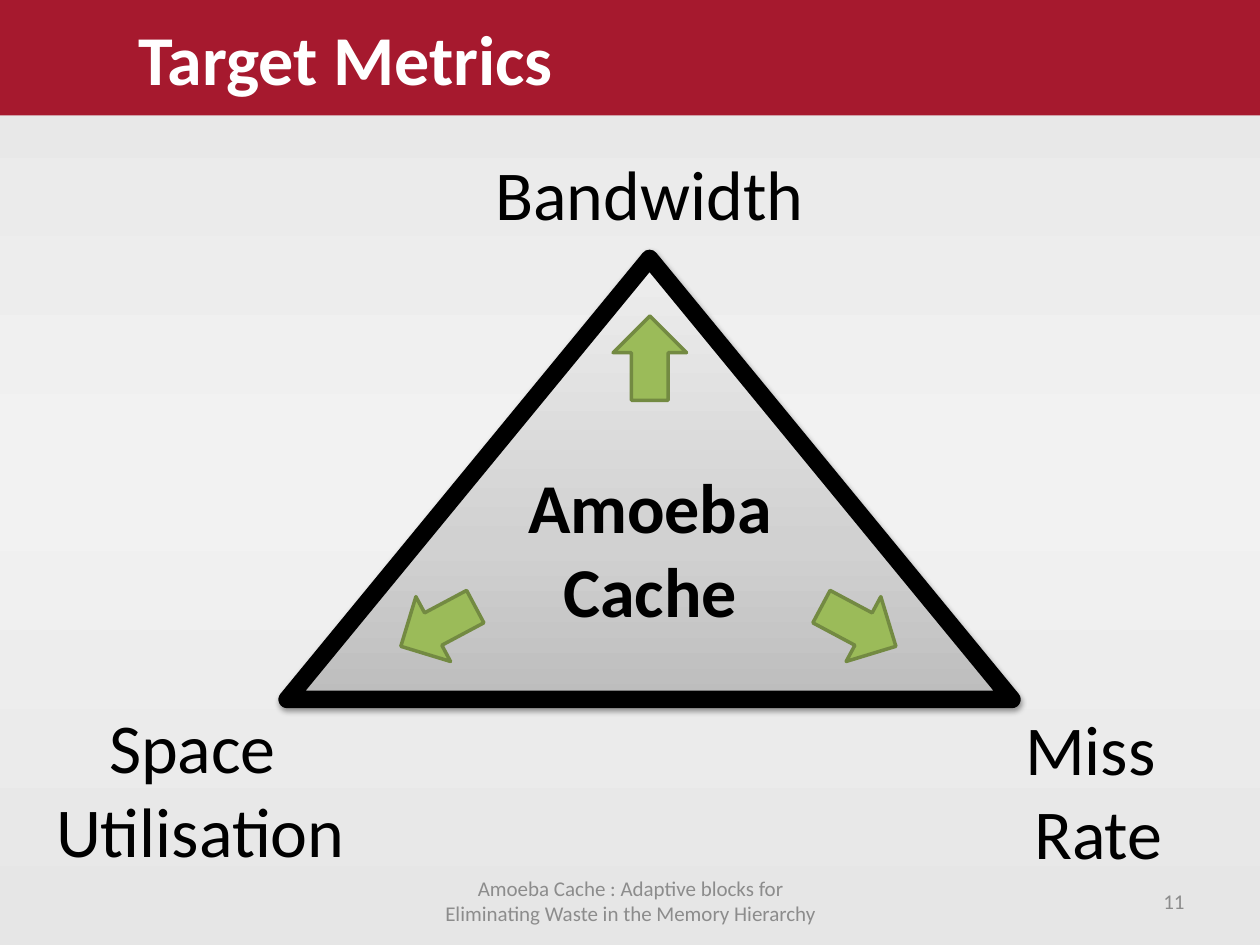
from lxml.etree import SubElement
from pptx import Presentation
from pptx.dml.color import RGBColor
from pptx.enum.shapes import MSO_SHAPE
from pptx.enum.text import MSO_ANCHOR, PP_ALIGN
from pptx.oxml.ns import qn
from pptx.util import Cm, Pt

BLACK = RGBColor(0x00, 0x00, 0x00)
WHITE = RGBColor(0xFF, 0xFF, 0xFF)
GREY = RGBColor(0x8C, 0x8C, 0x8C)
CRIMSON = RGBColor(0xA6, 0x19, 0x2E)
GREEN = RGBColor(0x9B, 0xBB, 0x59)
DARK_GREEN = RGBColor(0x73, 0x8A, 0x42)
EDGE_GREY = RGBColor(0xE6, 0xE6, 0xE6)
MIDDLE_GREY = RGBColor(0xF2, 0xF2, 0xF2)
TRIANGLE_DARK = RGBColor(0xBD, 0xBD, 0xBD)
TRIANGLE_MIDDLE = RGBColor(0xD1, 0xD1, 0xD1)
TRIANGLE_LIGHT = RGBColor(0xEE, 0xEE, 0xEE)


def fill_gradient(fill, element, stops, angle):
    fill.gradient()
    fill.gradient_angle = angle
    stop_list = next(element.iter(qn("a:gsLst")))
    for stop in list(stop_list):
        stop_list.remove(stop)
    for percent, color in stops:
        stop = SubElement(stop_list, qn("a:gs"), pos=str(percent * 1000))
        SubElement(stop, qn("a:srgbClr"), val=str(color))


def add_outline(shape, color, width):
    shape.line.color.rgb = color
    shape.line.width = Pt(width)
    SubElement(shape.line._get_or_add_ln(), qn("a:round"))


def add_soft_shadow(shape):
    effects = shape._element.spPr.find(qn("a:effectLst"))
    shadow = SubElement(effects, qn("a:outerShdw"), blurRad=str(Pt(3.1)),
                        dist=str(Pt(1.6)), dir="5400000", rotWithShape="0")
    color = SubElement(shadow, qn("a:srgbClr"), val=str(BLACK))
    SubElement(color, qn("a:alpha"), val="38000")


def add_plain_shape(page, kind, left, top, width, height):
    shape = page.shapes.add_shape(kind, Cm(left), Cm(top), Cm(width), Cm(height))
    shape.shadow.inherit = False
    return shape


def write_lines(frame, lines, size, color, bold=False, align=PP_ALIGN.CENTER):
    for index, line in enumerate(lines):
        para = frame.add_paragraph() if index else frame.paragraphs[0]
        para.alignment = align
        span = para.add_run()
        span.text = line
        span.font.name = "Calibri"
        span.font.size = Pt(size)
        span.font.bold = bold
        span.font.color.rgb = color


def add_label(page, left, top, width, height, lines, bold=False):
    box = page.shapes.add_textbox(Cm(left), Cm(top), Cm(width), Cm(height))
    box.text_frame.word_wrap = False
    write_lines(box.text_frame, lines, 40, BLACK, bold)


def add_footer(page, left, width, text, align):
    box = page.shapes.add_textbox(Cm(left), Cm(17.65), Cm(width), Cm(1.02))
    box.text_frame.word_wrap = True
    box.text_frame.vertical_anchor = MSO_ANCHOR.MIDDLE
    write_lines(box.text_frame, [text], 12, GREY, align=align)


def add_triangle(page):
    triangle = add_plain_shape(page, MSO_SHAPE.ISOSCELES_TRIANGLE, 5.79, 5.21, 14.61, 8.89)
    stops = [(0, TRIANGLE_DARK), (35, TRIANGLE_MIDDLE), (100, TRIANGLE_LIGHT)]
    fill_gradient(triangle.fill, triangle._element, stops, 90)
    add_outline(triangle, BLACK, 10)
    add_soft_shadow(triangle)


def add_arrow(page, left, top, rotation):
    arrow = add_plain_shape(page, MSO_SHAPE.RIGHT_ARROW, left, top, 1.7, 1.48)
    arrow.rotation = rotation
    arrow.fill.solid()
    arrow.fill.fore_color.rgb = GREEN
    add_outline(arrow, DARK_GREEN, 2)


def add_title_bar(page, title):
    bar = add_plain_shape(page, MSO_SHAPE.RECTANGLE, 0, 0, 25.4, 2.33)
    bar.fill.solid()
    bar.fill.fore_color.rgb = CRIMSON
    bar.line.fill.background()
    bar.text_frame.margin_left = Cm(2.79)
    bar.text_frame.vertical_anchor = MSO_ANCHOR.MIDDLE
    write_lines(bar.text_frame, [title], 40, WHITE, True, PP_ALIGN.LEFT)


def main():
    deck = Presentation()
    deck.slide_width, deck.slide_height = Cm(25.4), Cm(19.05)
    page = deck.slides.add_slide(deck.slide_layouts[6])
    stops = [(0, EDGE_GREY), (50, MIDDLE_GREY), (100, EDGE_GREY)]
    fill_gradient(page.background.fill, page.element, stops, 270)

    add_triangle(page)
    add_label(page, 20.4, 14.1, 3.48, 3.68, ["Miss ", "Rate"])
    add_label(page, 0.84, 14.05, 6.4, 3.68, ["Space ", "Utilisation"])
    add_label(page, 9.7, 2.9, 6.78, 1.96, ["Bandwidth"])
    for left, top, rotation in [(12.25, 6.48, 270), (7.98, 11.89, 151.9), (16.46, 11.89, 28.1)]:
        add_arrow(page, left, top, rotation)
    add_label(page, 10.36, 9.22, 5.49, 3.68, ["Amoeba", "Cache"], bold=True)

    add_title_bar(page, "Target Metrics")
    add_footer(page, 8.69, 8.05,
               "Amoeba Cache : Adaptive blocks for Eliminating Waste in the Memory Hierarchy",
               PP_ALIGN.CENTER)
    add_footer(page, 18.21, 5.92, "11", PP_ALIGN.RIGHT)
    deck.save("out.pptx")


if __name__ == "__main__":
    main()
